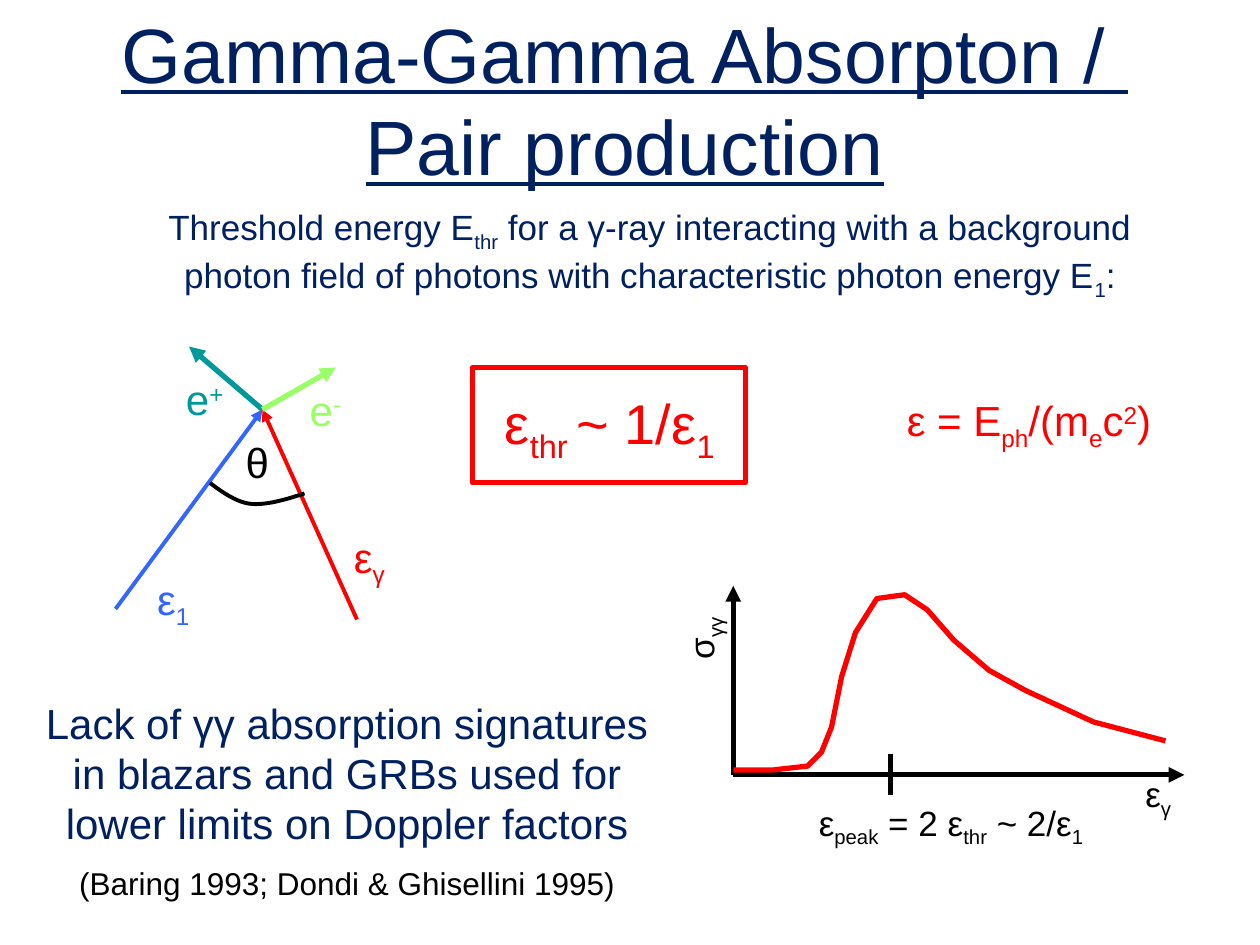
import pptx
import pptx.dml.color
import pptx.enum.shapes
import pptx.enum.text
import pptx.oxml.ns
import pptx.util
from lxml import etree

COLORS = {"navy": "002060", "red": "FF0000", "black": "000000",
          "blue": "3366FF", "teal": "009999", "green": "99FF66"}
BASELINES = {"_": "-25000", "^": "30000"}
FONT = "Arial"
CENTER = pptx.enum.text.PP_ALIGN.CENTER
LEFT = pptx.enum.text.PP_ALIGN.LEFT

# Grid of 120 columns by 90 rows, twelve cells to the inch
ORIGIN = (69.84, 73.8)   # corner of the plot axes
VERTEX = (25, 39)        # where the photons collide
CROSS_SECTION = [
    (69.84, 73.32), (73.68, 73.32), (76.92, 72.96), (78.24, 71.64),
    (79.2, 69.24), (80.16, 64.44), (81.48, 60.24), (83.52, 57),
    (86.16, 56.64), (88.32, 58.08), (90.84, 60.96), (94.2, 63.84),
    (97.68, 65.76), (104.16, 68.76), (111, 70.56)]
ANGLE_ARC = [
    [(20, 46), (21.2, 46.9), (22.6, 47.9), (24, 48)],
    [(24, 48), (25.4, 48.1), (27.2, 47.6), (29, 47)]]


def cells(*counts):
    return [pptx.util.Inches(count / 12) for count in counts]


def rgb(color):
    return pptx.dml.color.RGBColor.from_string(COLORS[color])


def write(para, text, size=24, color="black", align=CENTER, underline=None, before=0):
    """Fill a paragraph; parts are split by |, with _ for sub and ^ for superscript."""
    para.alignment = align
    para.space_before = pptx.util.Pt(before)
    for part in text.split("|"):
        span = para.add_run()
        span.text = part.lstrip("_^")
        span.font.name = FONT
        span.font.size = pptx.util.Pt(size)
        span.font.color.rgb = rgb(color)
        span.font.underline = underline
        if part[0] in BASELINES:
            span._r.get_or_add_rPr().set("baseline", BASELINES[part[0]])


def add_text(page, place, text, rotation=0, **style):
    box = page.shapes.add_textbox(*cells(*place))
    box.rotation = rotation
    box.text_frame.word_wrap = True
    write(box.text_frame.paragraphs[0], text, **style)
    return box


def style_line(shape, color, width):
    shape.line.color.rgb = rgb(color)
    shape.line.width = pptx.util.Pt(width)


def add_line(page, start, end, color="black", width=3, arrow=True):
    line = page.shapes.add_connector(
        pptx.enum.shapes.MSO_CONNECTOR.STRAIGHT, *cells(*start, *end))
    style_line(line, color, width)
    qn = pptx.oxml.ns.qn
    if arrow:
        etree.SubElement(line.line._get_or_add_ln(), qn("a:tailEnd"), type="triangle")
    etree.SubElement(line._element.spPr, qn("a:effectLst"))


def add_curve(page, points, color, width):
    builder = page.shapes.build_freeform(*cells(*points[0]))
    builder.add_line_segments([cells(*point) for point in points[1:]], close=False)
    curve = builder.convert_to_shape()
    curve.fill.background()
    curve.shadow.inherit = False
    style_line(curve, color, width)


def bezier(controls, steps=12):
    for step in range(steps + 1):
        t = step / steps
        weights = ((1 - t) ** 3, 3 * t * (1 - t) ** 2, 3 * t ** 2 * (1 - t), t ** 3)
        yield tuple(sum(weight * value for weight, value in zip(weights, axis))
                    for axis in zip(*controls))


def add_title(page):
    title = page.shapes.title
    title.left, title.top, title.width, title.height = cells(7, 0, 105, 19)
    frame = title.text_frame
    frame.word_wrap = True
    frame.auto_size = pptx.enum.text.MSO_AUTO_SIZE.NONE
    frame.vertical_anchor = pptx.enum.text.MSO_ANCHOR.TOP
    style = {"size": 44, "color": "navy", "underline": True}
    write(frame.paragraphs[0], "Gamma-Gamma Absorpton / ", **style)
    write(frame.add_paragraph(), "Pair production", **style)


def add_statements(page):
    add_text(page, (11.9, 19, 100, 9.2),
             "Threshold energy E|_thr| for a γ-ray interacting with a background "
             "photon field of photons with characteristic photon energy E|_1|:",
             size=20, color="navy")
    add_text(page, (83, 37, 30, 6), "ε = E|_ph|/(m|_e|c|^2|)", color="red")
    # Framed threshold formula
    add_text(page, (43, 36.4, 31, 7.7), "ε|_thr |~ 1/ε|_1 ", size=32, color="red")
    frame = page.shapes.add_shape(
        pptx.enum.shapes.MSO_SHAPE.RECTANGLE, *cells(45, 35, 26, 11))
    frame.fill.background()
    frame.shadow.inherit = False
    style_line(frame, "red", 3)
    # Conclusion with its references
    box = add_text(page, (1.2, 65.8, 63.7, 21.2),
                   "Lack of γγ absorption signatures in blazars and GRBs used for "
                   "lower limits on Doppler factors", color="navy")
    write(box.text_frame.add_paragraph(), "(Baring 1993; Dondi & Ghisellini 1995)",
          size=18, before=9)


def add_collision(page):
    # Incoming photons, then the outgoing pair
    add_line(page, (11, 58), VERTEX, "blue", 2.25)
    add_line(page, (34, 59), VERTEX, "red", 2.25)
    add_line(page, VERTEX, (18, 33), "teal")
    add_line(page, VERTEX, (32, 35), "green")
    for place, text, color in (
            ((9, 54, 15, 6), "ε|_1", "blue"),
            ((28, 50, 15, 6), "ε|_γ ", "red"),
            ((15, 35, 9, 6), "e|^+", "teal"),
            ((27, 36, 8, 6), "e|^-", "green"),
            ((20, 41, 9, 6), "θ", "black")):
        add_text(page, place, text, color=color)
    arc = [point for controls in ANGLE_ARC for point in bezier(controls)]
    add_curve(page, arc, "black", 2.25)


def add_plot(page):
    add_line(page, ORIGIN, (ORIGIN[0], 55.8))
    add_line(page, ORIGIN, (112.8, ORIGIN[1]))
    add_curve(page, CROSS_SECTION, "red", 3)
    add_line(page, (84.84, 71.8), (84.84, 75.7), arrow=False)
    label = {"size": 20, "align": LEFT}
    add_text(page, (62.2, 56.9, 9, 5.2), "σ|_γγ", rotation=270, **label)
    add_text(page, (107.9, 73, 9, 5.2), "ε|_γ", **label)
    add_text(page, (76.8, 75.7, 30, 5.3), "ε|_peak| = 2 ε|_thr| ~ 2/ε|_1", **label)


def main():
    deck = pptx.Presentation()
    deck.slide_width, deck.slide_height = cells(120, 90)
    page = deck.slides.add_slide(deck.slide_layouts.get_by_name("Title Only"))
    add_title(page)
    add_statements(page)
    add_collision(page)
    add_plot(page)
    deck.save("out.pptx")


if __name__ == "__main__":
    main()
